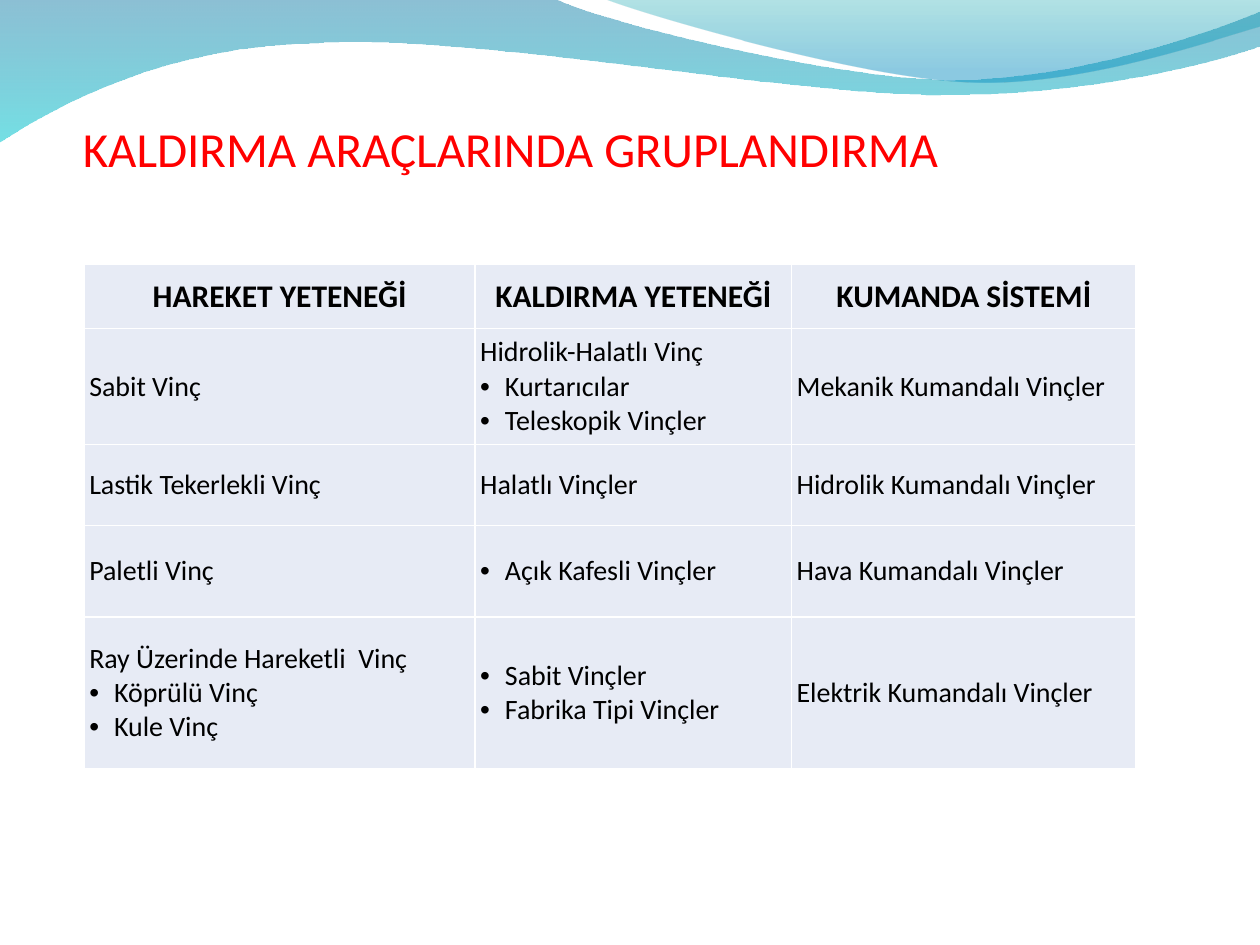
from lxml.etree import SubElement
from pptx import Presentation
from pptx.dml.color import RGBColor
from pptx.enum.text import MSO_ANCHOR, PP_ALIGN
from pptx.oxml.ns import qn
from pptx.util import Cm, Pt

FONT = "Calibri"
RED = RGBColor(0xFF, 0x00, 0x00)
BLACK = RGBColor(0x00, 0x00, 0x00)
WHITE = RGBColor(0xFF, 0xFF, 0xFF)
PALE_BLUE = RGBColor(0xE7, 0xEB, 0xF5)
DEEP_BLUE = RGBColor(0x00, 0x74, 0xA1)
AQUA = RGBColor(0x00, 0xC6, 0xCF)
TEAL = RGBColor(0x00, 0xA1, 0xA9)
SKY_BLUE = RGBColor(0x00, 0x8B, 0xBF)

TITLE = "KALDIRMA ARAÇLARINDA GRUPLANDIRMA"
BULLET = "• "
HEADINGS = ["HAREKET YETENEĞİ", "KALDIRMA YETENEĞİ", "KUMANDA SİSTEMİ"]
CRANES = [
    ["Sabit Vinç",
     "Hidrolik-Halatlı Vinç\n• Kurtarıcılar\n• Teleskopik Vinçler",
     "Mekanik Kumandalı Vinçler"],
    ["Lastik Tekerlekli Vinç", "Halatlı Vinçler", "Hidrolik Kumandalı Vinçler"],
    ["Paletli Vinç", "• Açık Kafesli Vinçler", "Hava Kumandalı Vinçler"],
    ["Ray Üzerinde Hareketli  Vinç\n• Köprülü Vinç\n• Kule Vinç",
     "• Sabit Vinçler\n• Fabrika Tipi Vinçler",
     "Elektrik Kumandalı Vinçler"],
]
COLUMN_WIDTHS = [7.88, 6.38, 6.94]
ROW_HEIGHTS = [1.29, 2.34, 1.63, 1.85, 3.05]

WAVES = [
    {"start": (0, 0),
     "steps": [
         [(11.18, -0.03)],
         [(12.09, 0.43), (16.87, 1.6), (19.25, 1.6)],
         [(21.67, 1.6), (24.33, 0.66), (25.4, 0.23)],
         [(25.43, 0.91)],
         [(24.97, 1.12), (22.1, 1.93), (18.95, 1.91)],
         [(15.8, 1.91), (9.7, 0.71), (6.53, 0.86)],
         [(3.28, 0.91), (1.17, 2.11), (-0.03, 2.87)],
         [(0, 0)],
     ],
     "stops": [(0, DEEP_BLUE, 45), (1, AQUA, 55)]},
    {"start": (12.17, -0.03),
     "steps": [
         [(12.93, 0.28), (17.32, 1.57), (19.53, 1.65)],
         [(21.74, 1.75), (24.41, 0.81), (25.4, 0.53)],
         [(25.4, 0)],
         [(12.17, -0.03)],
     ],
     "stops": [(0, TEAL, 30), (0.8, SKY_BLUE, 45)]},
]


def bend_lines(wave, steps):
    lines = iter(list(wave._element.iter(qn("a:lnTo"))))
    for step in steps:
        first, *others = [next(lines) for _ in step]
        if others:
            first.tag = qn("a:cubicBezTo")
        for line in others:
            first.append(line[0])
            line.getparent().remove(line)


def add_wave(slide, start, steps, stops):
    builder = slide.shapes.build_freeform(Cm(start[0]), Cm(start[1]))
    builder.add_line_segments([(Cm(x), Cm(y)) for step in steps for x, y in step])
    wave = builder.convert_to_shape()
    SubElement(next(wave._element.iter(qn("a:path"))), qn("a:close"))
    bend_lines(wave, steps)
    wave.shadow.inherit = False
    wave.line.fill.background()
    wave.fill.gradient()
    wave.fill.gradient_angle = 270
    for stop, (position, color, _) in zip(wave.fill.gradient_stops, stops):
        stop.position = position
        stop.color.rgb = color
    tints = list(wave._element.iter(qn("a:srgbClr")))
    for tint, (_, _, opacity) in zip(tints, stops):
        SubElement(tint, qn("a:alpha"), val=str(opacity * 1000))


def style_text(paragraph, size, color, bold=False):
    for run in paragraph.runs:
        run.font.name = FONT
        run.font.size = Pt(size)
        run.font.bold = bold
        run.font.color.rgb = color


def add_title(slide):
    title = slide.shapes.add_textbox(Cm(1.67), Cm(1.92), Cm(22.22), Cm(2))
    frame = title.text_frame
    frame.word_wrap = True
    frame.vertical_anchor = MSO_ANCHOR.MIDDLE
    frame.margin_left = frame.margin_right = frame.margin_bottom = 0
    frame.margin_top = Cm(0.13)
    frame.text = TITLE
    style_text(frame.paragraphs[0], 28, RED)


def add_bullet(paragraph):
    properties = paragraph._p.get_or_add_pPr()
    properties.set("marL", str(Cm(0.5)))
    properties.set("indent", str(-Cm(0.5)))
    SubElement(properties, qn("a:buFont"), typeface="Arial")
    SubElement(properties, qn("a:buChar"), char=BULLET.strip())


def add_borders(cell):
    properties = cell._tc.get_or_add_tcPr()
    for side in ("lnL", "lnR", "lnT", "lnB"):
        border = SubElement(properties, qn(f"a:{side}"), w=str(Pt(1)))
        fill = SubElement(border, qn("a:solidFill"))
        SubElement(fill, qn("a:srgbClr"), val=str(WHITE))


def fill_cell(cell, content, heading):
    add_borders(cell)
    cell.fill.solid()
    cell.fill.fore_color.rgb = PALE_BLUE
    cell.vertical_anchor = MSO_ANCHOR.MIDDLE
    cell.margin_left = cell.margin_right = Cm(0.1)
    cell.margin_top = cell.margin_bottom = Cm(0.1)
    cell.text_frame.text = content
    for paragraph in cell.text_frame.paragraphs:
        if paragraph.text.startswith(BULLET):
            paragraph.text = paragraph.text.removeprefix(BULLET)
            add_bullet(paragraph)
        paragraph.alignment = PP_ALIGN.CENTER if heading else PP_ALIGN.LEFT
        style_text(paragraph, 18 if heading else 16, BLACK, heading)


def add_crane_table(slide):
    rows = [HEADINGS] + CRANES
    table = slide.shapes.add_table(
        len(rows), len(HEADINGS), Cm(1.7), Cm(5.33),
        Cm(sum(COLUMN_WIDTHS)), Cm(sum(ROW_HEIGHTS))).table
    for column, width in zip(table.columns, COLUMN_WIDTHS):
        column.width = Cm(width)
    for row, height in zip(table.rows, ROW_HEIGHTS):
        row.height = Cm(height)
    for r, contents in enumerate(rows):
        for c, content in enumerate(contents):
            fill_cell(table.cell(r, c), content, r == 0)


def main():
    deck = Presentation()
    deck.slide_width, deck.slide_height = Cm(25.4), Cm(19.05)
    slide = deck.slides.add_slide(deck.slide_layouts[6])
    for wave in WAVES:
        add_wave(slide, **wave)
    add_title(slide)
    add_crane_table(slide)
    deck.save("out.pptx")


if __name__ == "__main__":
    main()
